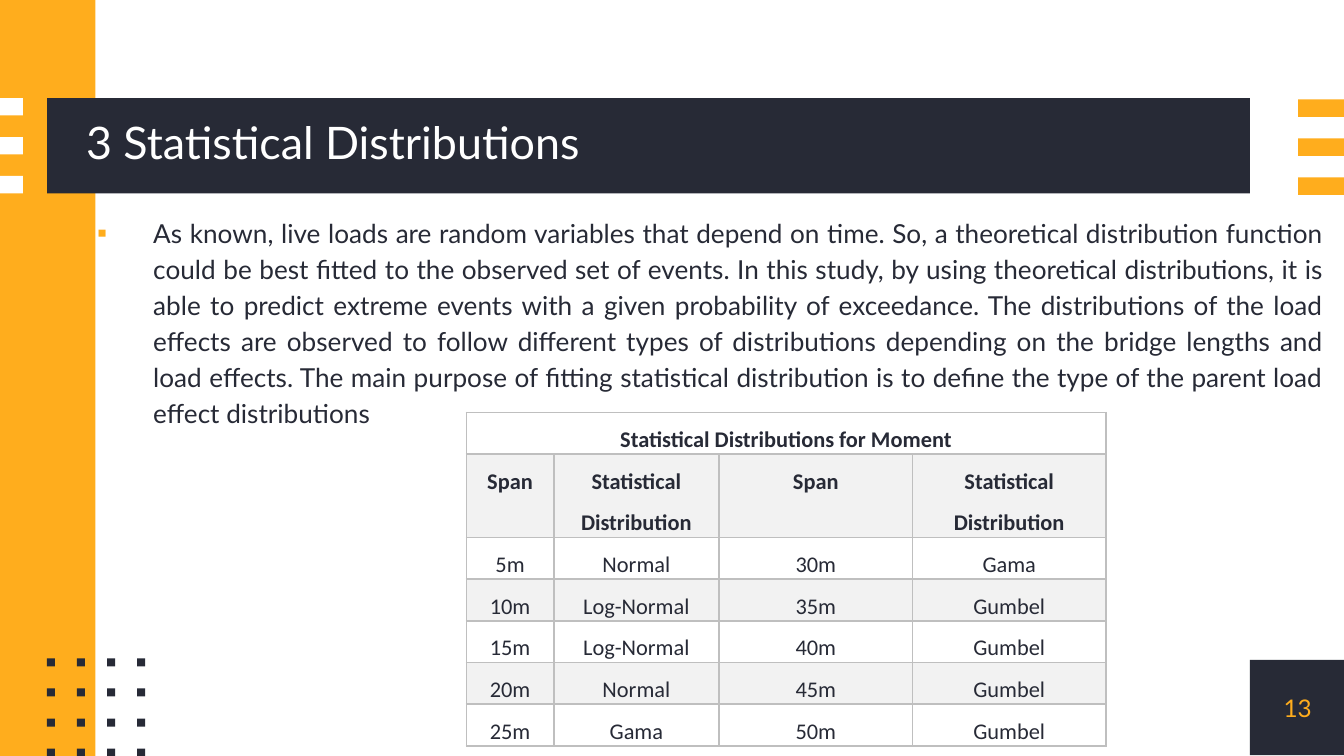
import dataclasses

import pptx
import pptx.dml.color
import pptx.enum.shapes
import pptx.enum.text
import pptx.oxml
import pptx.oxml.ns
import pptx.util

Inches = pptx.util.Inches
Pt = pptx.util.Pt
ALIGN = pptx.enum.text.PP_ALIGN
ANCHOR = pptx.enum.text.MSO_ANCHOR


@dataclasses.dataclass(frozen=True)
class Theme:
    dark: str = "272A36"
    accent: str = "FFAD1D"
    white: str = "FFFFFF"
    band: str = "F2F2F2"
    border: str = "BFBFBF"
    font: str = "Lato"
    table_font: str = "Calibri"
    title_size: int = 24
    body_size: int = 14
    number_size: int = 13
    table_size: int = 12


THEME = Theme()

BODY = (
    "As known, live loads are random variables that depend on time. So, a theoretical "
    "distribution function could be best fitted to the observed set of events. In this study, "
    "by using theoretical distributions, it is able to predict extreme events with a given "
    "probability of exceedance. The distributions of the load effects are observed to follow "
    "different types of distributions depending on the bridge lengths and load effects. The main "
    "purpose of fitting statistical distribution is to define the type of the parent load effect "
    "distributions"
)
TABLE_TITLE = "Statistical Distributions for Moment"
TABLE_ROWS = [
    ("Span", "Statistical Distribution", "Span", "Statistical Distribution"),
    ("5m", "Normal", "30m", "Gama"),
    ("10m", "Log-Normal", "35m", "Gumbel"),
    ("15m", "Log-Normal", "40m", "Gumbel"),
    ("20m", "Normal", "45m", "Gumbel"),
    ("25m", "Gama", "50m", "Gumbel"),
]
COLUMN_WIDTHS = (0.65, 1.23, 1.44, 1.44)
ROW_HEIGHTS = (0.31, 0.62, 0.31, 0.31, 0.31, 0.31, 0.31)


def rgb(color):
    return pptx.dml.color.RGBColor.from_string(color)


def add_block(page, left, top, width, height, color):
    block = page.shapes.add_shape(
        pptx.enum.shapes.MSO_SHAPE.RECTANGLE,
        Inches(left), Inches(top), Inches(width), Inches(height))
    block.shadow.inherit = False
    block.fill.solid()
    block.fill.fore_color.rgb = rgb(color)
    block.line.fill.background()


def add_stripes(page, left, top, width, color):
    for row in range(3):
        add_block(page, left, top + row * 0.29, width, 0.13, color)


def add_dots(page, left, top, span):
    """Spread a four by four grid of dots, span being first to last dot."""
    gap = span / 3
    for row in range(4):
        for column in range(4):
            add_block(page, left + column * gap, top + row * gap, 0.06, 0.06, THEME.dark)


def style_paragraph(para, font, size, color, bold=False):
    para.font.name = font
    para.font.size = Pt(size)
    para.font.color.rgb = rgb(color)
    para.font.bold = bold


def add_text(page, box, text, size, color, anchor=ANCHOR.MIDDLE):
    """Add a one-paragraph text box without margins and return its paragraph."""
    frame = page.shapes.add_textbox(*map(Inches, box)).text_frame
    frame.word_wrap = True
    frame.vertical_anchor = anchor
    frame.margin_left = frame.margin_right = frame.margin_top = frame.margin_bottom = 0
    para = frame.paragraphs[0]
    para.text = text
    style_paragraph(para, THEME.font, size, color)
    return para


def add_title(page, left, top, width, height, text):
    add_block(page, left, top, width, height, THEME.dark)
    box = (left + 0.29, top - 0.01, width - 0.37, height)
    add_text(page, box, text, THEME.title_size, THEME.white).line_spacing = 0.9


def add_body(page, box, text):
    para = add_text(page, box, text, THEME.body_size, THEME.dark, ANCHOR.TOP)
    para.alignment = ALIGN.JUSTIFY
    para.line_spacing = 1.15
    para.space_before = Pt(6)
    properties = para._p.get_or_add_pPr()
    properties.set("marL", str(Inches(0.5)))
    properties.set("indent", str(Inches(-0.42)))
    namespace = pptx.oxml.ns.nsdecls("a")
    bullet = (
        f'<a:buClr {namespace}><a:srgbClr val="{THEME.accent}"/></a:buClr>',
        f'<a:buFont {namespace} typeface="{THEME.font}"/>',
        f'<a:buChar {namespace} char="▪"/>',
    )
    position = properties.index(properties.find(pptx.oxml.ns.qn("a:defRPr")))
    for offset, xml in enumerate(bullet):
        properties.insert(position + offset, pptx.oxml.parse_xml(xml))


def add_page_number(page, left, top, size, number):
    add_block(page, left, top, size, size, THEME.dark)
    para = add_text(page, (left, top, size, size), number, THEME.number_size, THEME.accent)
    para.alignment = ALIGN.CENTER


def add_borders(cell):
    properties = cell._tc.get_or_add_tcPr()
    for position, side in enumerate(("lnL", "lnR", "lnT", "lnB")):
        properties.insert(position, pptx.oxml.parse_xml(
            f'<a:{side} {pptx.oxml.ns.nsdecls("a")} w="{Pt(1)}"><a:solidFill>'
            f'<a:srgbClr val="{THEME.border}"/></a:solidFill></a:{side}>'))


def style_cell(cell, text, banded, bold):
    cell.margin_left = cell.margin_right = Inches(0.07)
    cell.margin_top = cell.margin_bottom = 0
    if banded:
        cell.fill.solid()
        cell.fill.fore_color.rgb = rgb(THEME.band)
    else:
        cell.fill.background()
    add_borders(cell)
    para = cell.text_frame.paragraphs[0]
    para.text = text
    para.alignment = ALIGN.CENTER
    para.line_spacing = 1.5
    style_paragraph(para, THEME.table_font, THEME.table_size, THEME.dark, bold)


def add_distribution_table(page, left, top):
    rows = [(TABLE_TITLE, "", "", "")] + TABLE_ROWS
    table = page.shapes.add_table(
        len(rows), len(COLUMN_WIDTHS), Inches(left), Inches(top),
        Inches(sum(COLUMN_WIDTHS)), Inches(sum(ROW_HEIGHTS))).table
    for column, width in zip(table.columns, COLUMN_WIDTHS):
        column.width = Inches(width)
    for row, height in zip(table.rows, ROW_HEIGHTS):
        row.height = Inches(height)
    for row_index, values in enumerate(rows):
        for column_index, text in enumerate(values):
            style_cell(table.cell(row_index, column_index), text,
                       banded=row_index % 2 == 1, bold=row_index < 2)
    table.cell(0, 0).merge(table.cell(0, len(COLUMN_WIDTHS) - 1))


def main():
    deck = pptx.Presentation()
    deck.slide_width = Inches(10)
    deck.slide_height = deck.slide_width * 9 // 16
    page = deck.slides.add_slide(deck.slide_layouts[6])

    add_block(page, 0, 0, 0.71, deck.slide_height.inches, THEME.accent)
    add_stripes(page, 0, 0.73, 0.17, THEME.white)
    add_stripes(page, 9.66, 0.74, 0.34, THEME.accent)
    add_dots(page, 0.35, 4.9, 0.67)
    add_title(page, 0.35, 0.73, 8.95, 0.71, "3 Statistical Distributions")
    add_body(page, (0.64, 1.58, 9.21, 3.02), BODY)
    add_page_number(page, 9.3, 4.91, 0.71, "13")
    add_distribution_table(page, 3.47, 3.07)
    deck.save("out.pptx")


if __name__ == "__main__":
    main()
